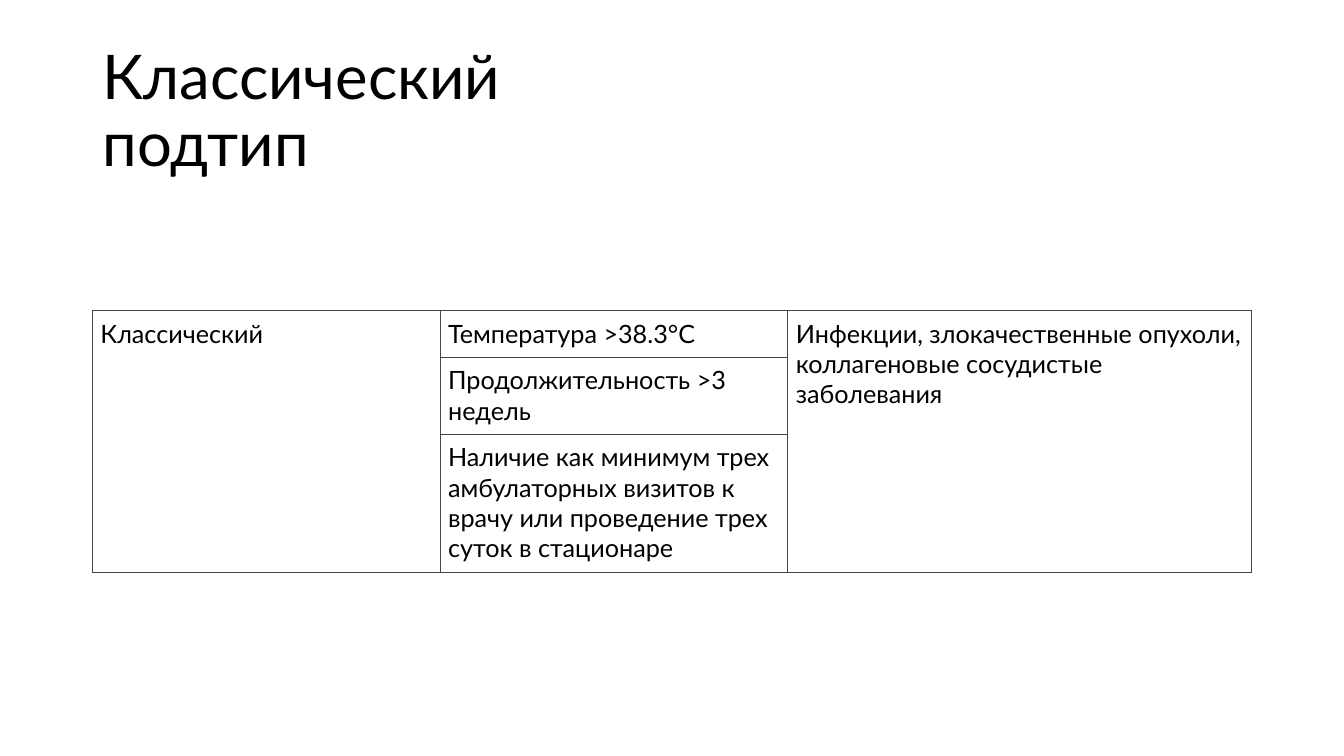
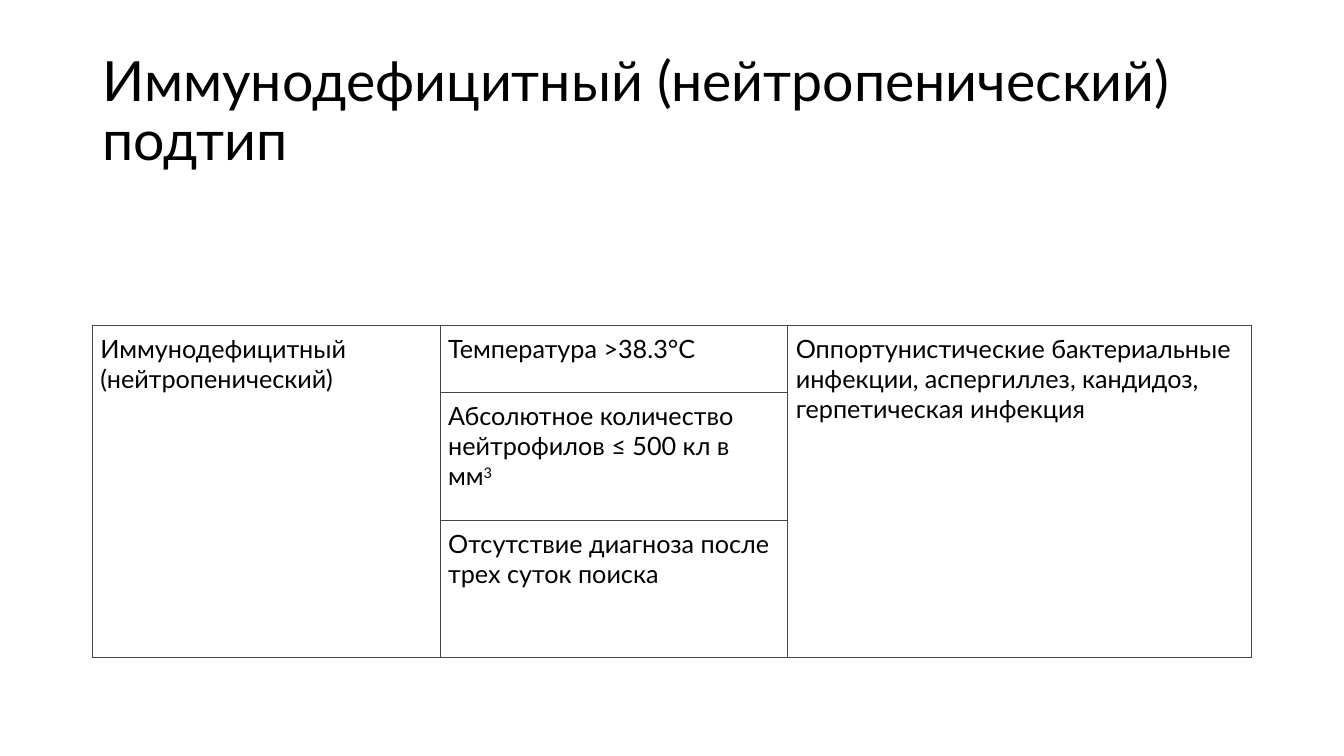
import pptx
import pptx.dml.color
import pptx.enum.text
import pptx.oxml
import pptx.oxml.ns
import pptx.util

Cm = pptx.util.Cm
Pt = pptx.util.Pt
RGBColor = pptx.dml.color.RGBColor

# Shared look
FONT = "Lato"
BLACK = RGBColor(0x00, 0x00, 0x00)
WHITE = RGBColor(0xFF, 0xFF, 0xFF)
BORDER = RGBColor(0x46, 0x46, 0x46)
BORDER_WIDTH = Pt(0.75)
CELL_MARGIN = Cm(0.2)

# Shared grid
LEFT, WIDTH = Cm(2.33), Cm(29.21)
TITLE_BOX = (LEFT, Cm(1.01), WIDTH, Cm(3.68))
COLUMN_SHARES = (0.3, 0.3, 0.4)

# Each criterion is a list of (text, is superscript) pieces
SUBTYPES = [
    {
        "title": "Классический\vподтип",
        "title_size": 44,
        "table_top": Cm(7.82),
        "row_heights": (Cm(1.18), Cm(1.94), Cm(3.48)),
        "name": "Классический",
        "criteria": [
            [("Температура >38.3°C", False)],
            [("Продолжительность >3 недель", False)],
            [("Наличие как минимум трех амбулаторных визитов к врачу "
              "или проведение трех суток в стационаре", False)],
        ],
        "causes": "Инфекции, злокачественные опухоли, "
                  "коллагеновые сосудистые заболевания",
    },
    {
        "title": "Иммунодефицитный (нейтропенический)\vподтип",
        "title_size": 39.6,
        "table_top": Cm(8.2),
        "row_heights": (Cm(1.69), Cm(3.22), Cm(3.46)),
        "name": "Иммунодефицитный (нейтропенический)",
        "criteria": [
            [("Температура >38.3°C", False)],
            [("Абсолютное количество нейтрофилов ≤ 500 кл в мм", False),
             ("3", True)],
            [("Отсутствие диагноза после трех суток поиска", False)],
        ],
        "causes": "Оппортунистические бактериальные инфекции, аспергиллез, "
                  "кандидоз, герпетическая инфекция",
    },
]


def add_text(para, text, *, size=18, superscript=False):
    """Append text to a paragraph; a vertical tab becomes a line break."""
    for index, line in enumerate(text.split("\v")):
        if index:
            para.add_line_break()
        span = para.add_run()
        span.text = line
        span.font.name = FONT
        span.font.size = Pt(size)
        span.font.color.rgb = BLACK
        if superscript:
            span.font._element.set("baseline", "30000")


def style_cell(cell):
    """Give a cell its margins, white fill and thin border."""
    cell.margin_left = cell.margin_right = CELL_MARGIN
    cell.margin_top = cell.margin_bottom = CELL_MARGIN
    cell.fill.solid()
    cell.fill.fore_color.rgb = WHITE
    properties = cell._tc.get_or_add_tcPr()
    for index, side in enumerate(("lnL", "lnR", "lnT", "lnB")):
        properties.insert(index, pptx.oxml.parse_xml(
            f'<a:{side} {pptx.oxml.ns.nsdecls("a")} w="{BORDER_WIDTH}">'
            f'<a:solidFill><a:srgbClr val="{BORDER}"/></a:solidFill>'
            f'</a:{side}>'))


def add_title(page, box, text, size):
    frame = page.shapes.add_textbox(*box).text_frame
    frame.word_wrap = True
    frame.vertical_anchor = pptx.enum.text.MSO_ANCHOR.MIDDLE
    para = frame.paragraphs[0]
    para.line_spacing = 0.9
    add_text(para, text, size=size)


def add_criteria_table(page, box, subtype):
    """Name and causes span all rows; each criterion has its own row."""
    heights = subtype["row_heights"]
    table = page.shapes.add_table(len(heights), len(COLUMN_SHARES), *box).table
    table.first_row = table.horz_banding = False
    for column, share in zip(table.columns, COLUMN_SHARES):
        column.width = round(box[2] * share)
    for row, height in zip(table.rows, heights):
        row.height = height
    for cell in table.iter_cells():
        style_cell(cell)

    # Merged outer columns
    for column, text in ((0, subtype["name"]), (2, subtype["causes"])):
        cell = table.cell(0, column)
        cell.merge(table.cell(len(heights) - 1, column))
        add_text(cell.text_frame.paragraphs[0], text)

    # Criteria column
    for row, pieces in enumerate(subtype["criteria"]):
        para = table.cell(row, 1).text_frame.paragraphs[0]
        for text, superscript in pieces:
            add_text(para, text, superscript=superscript)


def add_subtype_slide(deck, subtype):
    page = deck.slides.add_slide(deck.slide_layouts[6])
    page.background.fill.solid()
    page.background.fill.fore_color.rgb = WHITE
    add_title(page, TITLE_BOX, subtype["title"], subtype["title_size"])
    table_box = (LEFT, subtype["table_top"], WIDTH, sum(subtype["row_heights"]))
    add_criteria_table(page, table_box, subtype)


def main():
    deck = pptx.Presentation()
    deck.slide_width, deck.slide_height = Cm(33.87), Cm(19.05)
    for subtype in SUBTYPES:
        add_subtype_slide(deck, subtype)
    deck.save("out.pptx")


if __name__ == "__main__":
    main()
